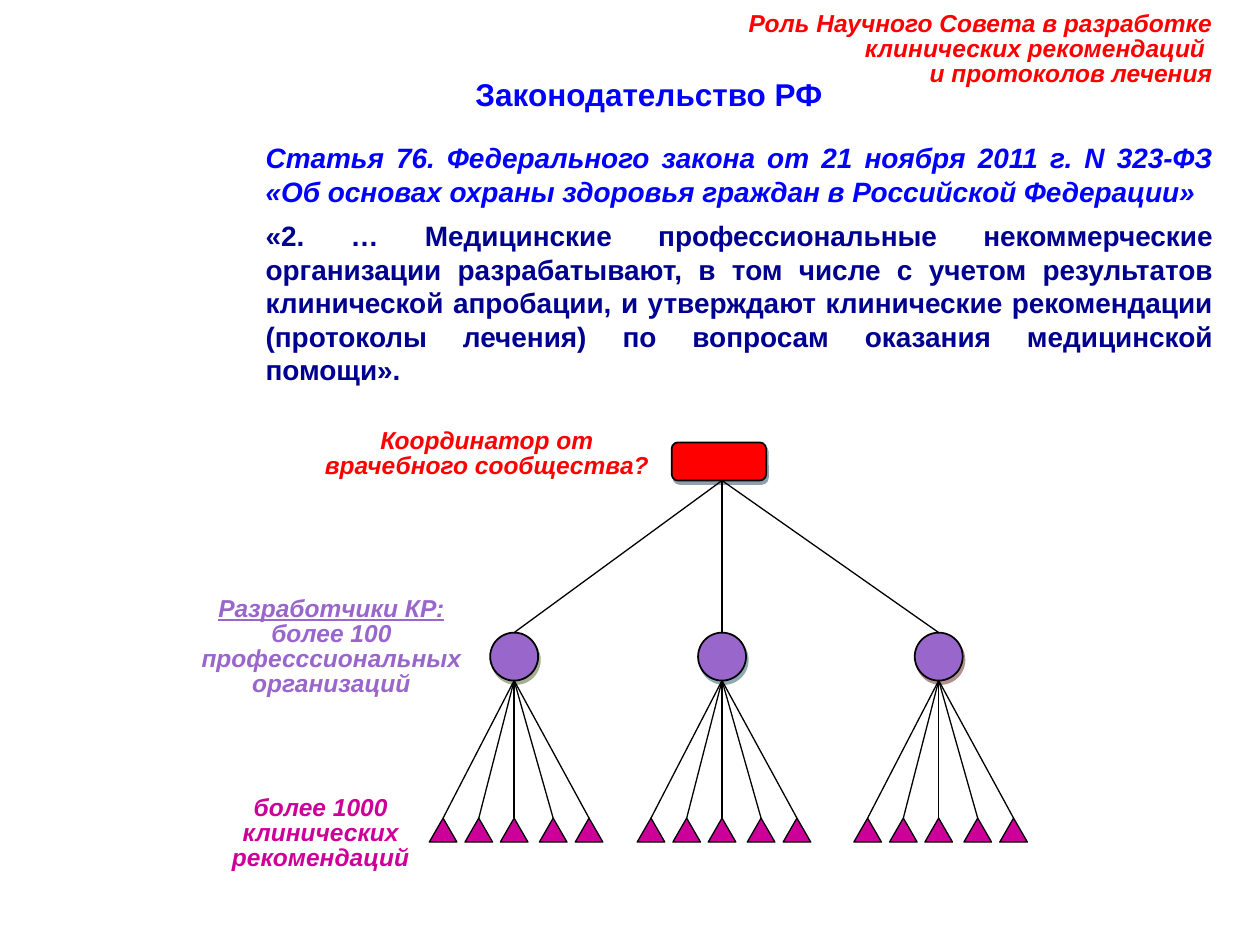
from lxml.etree import SubElement
from pptx import Presentation
from pptx.dml.color import RGBColor
from pptx.enum.shapes import MSO_CONNECTOR, MSO_SHAPE
from pptx.enum.text import MSO_ANCHOR, MSO_AUTO_SIZE, PP_ALIGN as ALIGN
from pptx.oxml.ns import qn
from pptx.util import Pt

COLORS = {
    "red": "FF0000", "blue": "0000FF", "navy": "000090", "violet": "9966CC",
    "magenta": "CC0099", "black": "000000", "olive_shadow": "4E6128",
    "teal_shadow": "205867", "brown_shadow": "622423", "blue_shadow": "243F60",
}
ORGANIZATIONS = [(293.8, "olive_shadow"), (412.6, "teal_shadow"), (536.4, "brown_shadow")]
GUIDELINE_OFFSETS = [-40.6, -20.2, 0, 22.3, 42.8]


def rgb(name):
    """Return the named colour."""
    return RGBColor.from_string(COLORS[name])


def write(frame, paragraphs, size=14, color="red", bold=True, italic=True,
          align=ALIGN.CENTER, spacing=0.85, gap=0):
    """Fill a text frame with (text, font overrides) paragraphs."""
    frame.word_wrap = True
    frame.auto_size = MSO_AUTO_SIZE.NONE
    frame.vertical_anchor = MSO_ANCHOR.TOP
    for index, (text, overrides) in enumerate(paragraphs):
        paragraph = frame.paragraphs[0] if index == 0 else frame.add_paragraph()
        paragraph.alignment = align
        paragraph.line_spacing = spacing
        paragraph.space_before = Pt(gap if index else 0)
        run = paragraph.add_run()
        run.text = text
        font = run.font
        font.name, font.size, font.bold = "Arial", Pt(size), bold
        font.italic = overrides.get("italic", italic)
        font.underline = overrides.get("underline", False)
        font.color.rgb = rgb(overrides.get("color", color))


def add_text(slide, box, paragraphs, **text_format):
    """Add a text box with formatted paragraphs."""
    label = slide.shapes.add_textbox(*map(Pt, box))
    write(label.text_frame, paragraphs, **text_format)


def add_node(shapes, kind, box, fill, line_width=1, shadow=None):
    """Add an outlined shape with an optional hard shadow."""
    node = shapes.add_shape(kind, *map(Pt, box))
    node.fill.solid()
    node.fill.fore_color.rgb = rgb(fill)
    node.line.color.rgb = rgb("black")
    node.line.width = Pt(line_width)
    node.shadow.inherit = False
    if shadow:
        effects = node._element.spPr.find(qn("a:effectLst"))
        outer = SubElement(effects, qn("a:outerShdw"), blurRad="0", dist=str(Pt(2.2)),
                           dir=str(63 * 60000), algn="ctr", rotWithShape="0")
        tint = SubElement(outer, qn("a:srgbClr"), val=COLORS[shadow])
        SubElement(tint, qn("a:alpha"), val="50000")


def add_link(shapes, start, end):
    """Join two points with a thin black line."""
    link = shapes.add_connector(MSO_CONNECTOR.STRAIGHT, *map(Pt, (*start, *end)))
    link.line.color.rgb = rgb("black")
    link.line.width = Pt(0.75)
    SubElement(link._element.spPr, qn("a:effectLst"))


def add_heading(slide, box):
    """Place the slide title."""
    title = slide.shapes.title
    title.left, title.top, title.width, title.height = map(Pt, box)
    write(title.text_frame, [("Законодательство РФ", {})],
          size=18, color="blue", italic=False, spacing=0.8)


def add_law(slide, box):
    """Place the citation of the law and its quoted clause."""
    add_text(slide, box, [
        ("Статья 76. Федерального закона от 21 ноября 2011 г. N 323-ФЗ "
         "«Об основах охраны здоровья граждан в Российской Федерации»", {}),
        ("«2. … Медицинские профессиональные некоммерческие организации разрабатывают, "
         "в том числе с учетом результатов клинической апробации, и утверждают "
         "клинические рекомендации (протоколы лечения) по вопросам оказания "
         "медицинской помощи».", {"color": "navy", "italic": False}),
    ], size=16, color="blue", align=ALIGN.JUSTIFY, spacing=1.0, gap=6)


def add_organization(shapes, center, top, shadow):
    """Draw one organization with its fan of guidelines."""
    diameter, drop, width, height = 27.4, 106, 15.8, 13.7
    hub = (center, top + diameter)
    base = top + drop
    add_node(shapes, MSO_SHAPE.OVAL, (center - diameter / 2, top, diameter, diameter),
             "violet", shadow=shadow)
    for offset in GUIDELINE_OFFSETS:
        tip = center + offset
        add_node(shapes, MSO_SHAPE.ISOSCELES_TRIANGLE,
                 (tip - width / 2, base, width, height), "magenta", 0.75)
        add_link(shapes, (tip, base), hub)


def add_hierarchy(slide, left, top):
    """Draw the coordinator and the organizations below it."""
    shapes = slide.shapes.add_group_shape().shapes
    width, height, organization_top = 54, 21.8, top + 108.7
    apex = (left + 28.8, top + height)
    add_node(shapes, MSO_SHAPE.FLOWCHART_ALTERNATE_PROCESS,
             (left, top, width, height), "red", shadow="blue_shadow")
    for center, shadow in ORGANIZATIONS:
        x = center - ORGANIZATIONS[1][0] + apex[0]
        add_organization(shapes, x, organization_top, shadow)
        add_link(shapes, (x, organization_top), apex)


def add_level_labels(slide):
    """Name the three levels of the hierarchy."""
    add_text(slide, (172.1, 241.9, 212.4, 36.7),
             [("Координатор от врачебного сообщества?", {})])
    add_text(slide, (81.4, 337.7, 216, 65.5), [
        ("Разработчики КР:", {"underline": True}),
        ("более 100 професссиональных организаций", {}),
    ], color="violet")
    add_text(slide, (103.7, 451.4, 159.1, 51.1),
             [("более 1000 клинических рекомендаций", {})], color="magenta")


def main():
    """Build and save the slide."""
    deck = Presentation()
    deck.slide_width, deck.slide_height = Pt(720), Pt(540)
    slide = deck.slides.add_slide(deck.slide_layouts[5])
    add_heading(slide, (263.5, 43.2, 214.6, 25.2))
    add_law(slide, (144.7, 77, 555.8, 149))
    add_hierarchy(slide, 383.8, 252.8)
    add_level_labels(slide)
    add_text(slide, (405.4, 3.6, 294.5, 51.1), [
        ("Роль Научного Совета в разработке клинических рекомендаций ", {}),
        ("и протоколов лечения", {}),
    ], align=ALIGN.RIGHT)
    deck.save("out.pptx")


if __name__ == "__main__":
    main()
